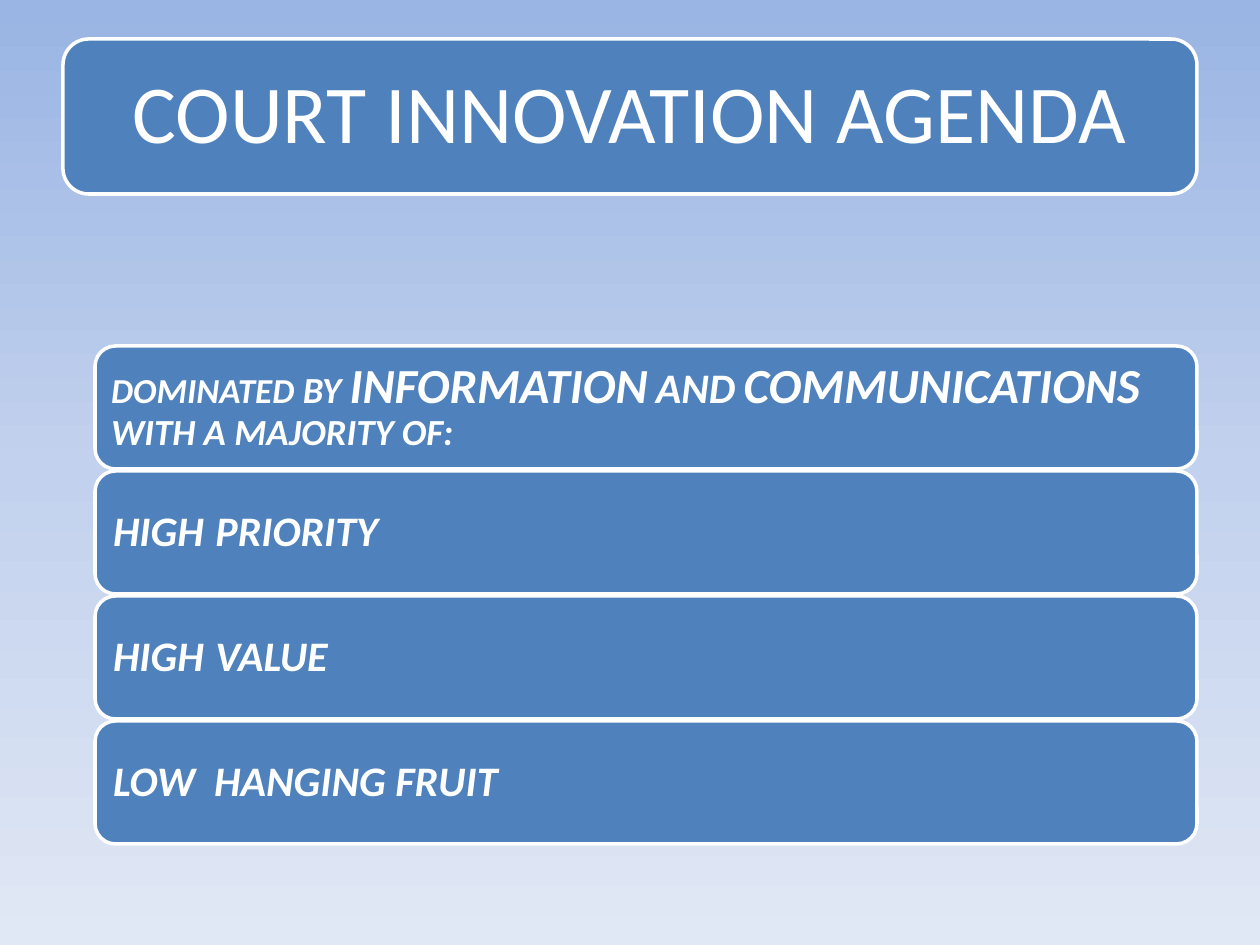
from copy import deepcopy

from pptx import Presentation
from pptx import util as u
from pptx.dml.color import RGBColor
from pptx.enum import shapes, text
from pptx.oxml.ns import qn

PX = 914400 / 126
THEME = {
    "font": "Calibri",
    "panel": "4F81BD",
    "white": "FFFFFF",
    "sky": [(0, "9AB5E4"), (0.5, "C2D1ED"), (1, "E1E8F5")],
    "title": 47, "key": 28, "row": 24, "lead": 21, "small": 20, "gap": 5,
}


def px(value):
    return u.Emu(round(value * PX))


def add_panel(page, bounds, margins, spans, emphasis):
    """Draw a rounded panel; spans are (words, theme size name) pairs."""
    panel = page.shapes.add_shape(shapes.MSO_SHAPE.ROUNDED_RECTANGLE, *map(px, bounds))
    panel.shadow.inherit = False
    panel.fill.solid()
    panel.fill.fore_color.rgb = RGBColor.from_string(THEME["panel"])
    panel.line.color.rgb = RGBColor.from_string(THEME["white"])
    panel.line.width = u.Pt(2)
    frame = panel.text_frame
    frame.word_wrap = True
    frame.vertical_anchor = text.MSO_ANCHOR.MIDDLE
    for side, margin in zip(("left", "top", "right", "bottom"), margins):
        setattr(frame, f"margin_{side}", px(margin))
    para = frame.paragraphs[0]
    para.alignment = text.PP_ALIGN.LEFT
    para.line_spacing = 0.9
    for words, size in spans:
        span = para.add_run()
        span.text = words
        span.font.color.rgb = RGBColor.from_string(THEME["white"])
        look = {"name": THEME["font"], "size": u.Pt(THEME[size]),
                "bold": emphasis, "italic": emphasis}
        for name, value in look.items():
            setattr(span.font, name, value)


deck = Presentation()
deck.slide_width, deck.slide_height = px(1260), px(945)
page = deck.slides.add_slide(deck.slide_layouts[6])

# Background: three-stop gradient from top to bottom
sky = page.background.fill
sky.gradient()
sky.gradient_angle = 270
stop_list = page.background._cSld.find(".//" + qn("a:gsLst"))
stop_list.insert(1, deepcopy(stop_list[0]))
for stop, (position, color) in zip(sky.gradient_stops, THEME["sky"]):
    stop.position = position
    stop.color.rgb = RGBColor.from_string(color)

# Title
add_panel(page, (63, 39, 1134, 155), (62, 25, 25, 25),
          [("COURT INNOVATION AGENDA", "title")], False)

# Agenda rows
ROW_LEFT, ROW_TOP, ROW_WIDTH, ROW_HEIGHT, ROW_PITCH = 95, 346, 1102, 123, 125
rows = [
    (10, [("DOMINATED", "small"), (" BY ", "lead"), ("INFORMATION", "key"),
          (" ", "lead"), ("AND", "row"), (" ", "lead"),
          ("COMMUNICATIONS", "key"), (" WITH A MAJORITY OF:", "lead")]),
    (12, [("HIGH ", "row"), (" ", "gap"), ("PRIORITY", "row")]),
    (12, [("HIGH ", "row"), (" ", "gap"), ("VALUE", "row")]),
    (12, [("LOW  HANGING FRUIT", "row")]),
]
for index, (margin, spans) in enumerate(rows):
    bounds = (ROW_LEFT, ROW_TOP + index * ROW_PITCH, ROW_WIDTH, ROW_HEIGHT)
    add_panel(page, bounds, [margin] * 4, spans, True)

deck.save("out.pptx")
